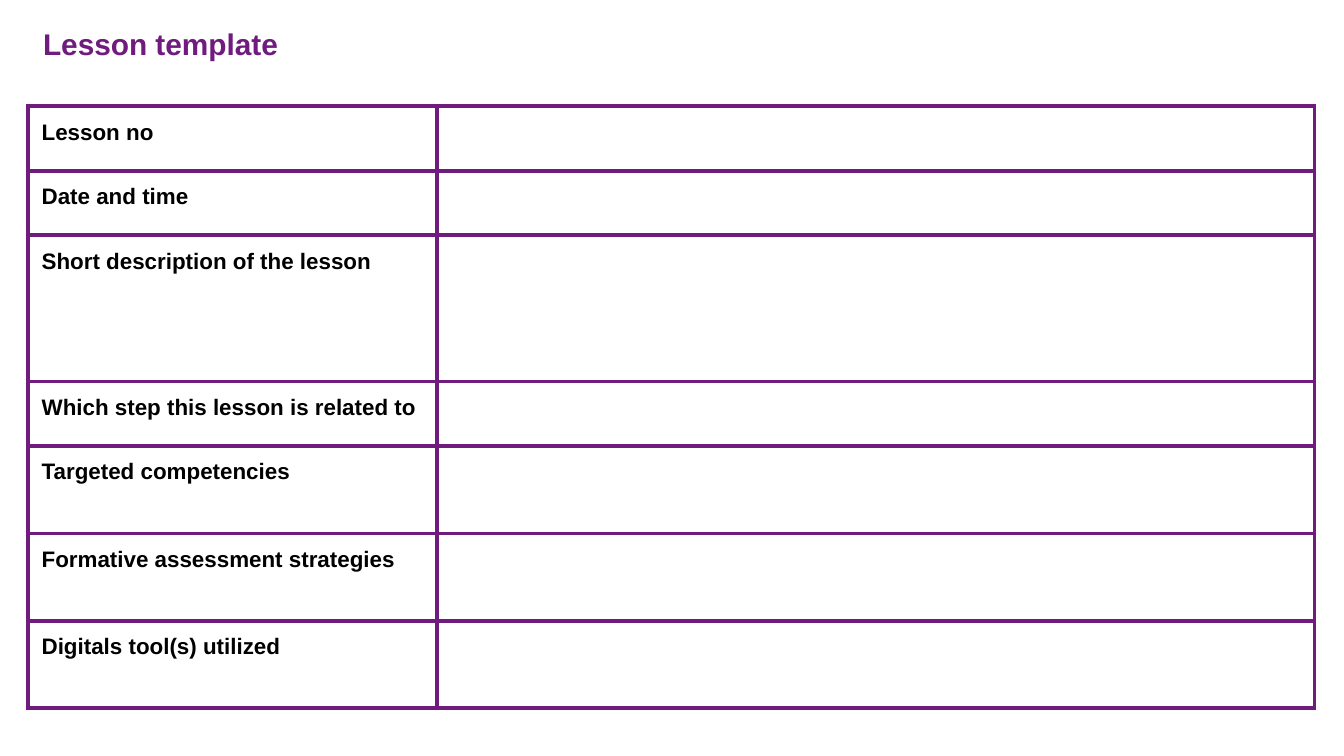
from lxml import etree
from pptx import Presentation
from pptx import util as u
from pptx.dml.color import RGBColor
from pptx.enum import text
from pptx.oxml import ns

PURPLE = RGBColor(0x70, 0x1C, 0x7F)
BLACK = RGBColor(0, 0, 0)
FONT = "Arial"
INSET = u.Inches(0.1)
BORDER_WIDTH = u.Pt(2.25)

# Widescreen slide
SLIDE_WIDTH = u.Inches(10)
SLIDE_HEIGHT = SLIDE_WIDTH * 9 // 16

# Table grid, in inches
COLUMN_WIDTHS = (3.04, 6.53)
SHORT, MEDIUM, TALL = 0.48, 0.65, 1.09
LESSON_FIELDS = (
    ("Lesson no", SHORT),
    ("Date and time", SHORT),
    ("Short description of the lesson", TALL),
    ("Which step this lesson is related to", SHORT),
    ("Targeted competencies", MEDIUM),
    ("Formative assessment strategies", MEDIUM),
    ("Digitals tool(s) utilized", MEDIUM),
)


def write_bold(frame, wording, size, color):
    paragraph = frame.paragraphs[0]
    paragraph.alignment = text.PP_ALIGN.LEFT
    run = paragraph.add_run()
    run.text = wording
    run.font.name = FONT
    run.font.size = u.Pt(size)
    run.font.bold = True
    run.font.color.rgb = color


def set_insets(area):
    area.margin_left = area.margin_right = INSET
    area.margin_top = area.margin_bottom = INSET


def add_title(slide, wording):
    title = slide.shapes.title
    title.left, title.top = u.Inches(0.22), u.Inches(0.09)
    title.width, title.height = u.Inches(9.2), u.Inches(1.17)
    frame = title.text_frame
    frame.auto_size = text.MSO_AUTO_SIZE.NONE
    frame.vertical_anchor = text.MSO_ANCHOR.TOP
    set_insets(frame)
    write_bold(frame, wording, 16, PURPLE)


def outline_cell(cell):
    properties = cell._tc.get_or_add_tcPr()
    for side in ("a:lnL", "a:lnR", "a:lnT", "a:lnB"):
        line = etree.SubElement(properties, ns.qn(side), w=str(BORDER_WIDTH))
        fill = etree.SubElement(line, ns.qn("a:solidFill"))
        etree.SubElement(fill, ns.qn("a:srgbClr"), val=str(PURPLE))


def add_lesson_table(slide):
    height = sum(row_height for _, row_height in LESSON_FIELDS)
    table = slide.shapes.add_table(
        len(LESSON_FIELDS), len(COLUMN_WIDTHS),
        u.Inches(0.21), u.Inches(0.79),
        u.Inches(sum(COLUMN_WIDTHS)), u.Inches(height),
    ).table
    table.first_row = table.horz_banding = False

    for column, width in zip(table.columns, COLUMN_WIDTHS):
        column.width = u.Inches(width)
    for row, (label, row_height) in zip(table.rows, LESSON_FIELDS):
        row.height = u.Inches(row_height)
        for cell in row.cells:
            outline_cell(cell)
            cell.fill.background()
        # Labels on the left, answers left open on the right
        label_cell = row.cells[0]
        set_insets(label_cell)
        write_bold(label_cell.text_frame, label, 12, BLACK)


def main():
    deck = Presentation()
    deck.slide_width, deck.slide_height = SLIDE_WIDTH, SLIDE_HEIGHT
    slide = deck.slides.add_slide(deck.slide_layouts.get_by_name("Title Only"))
    add_title(slide, "Lesson template")
    add_lesson_table(slide)
    deck.save("out.pptx")


if __name__ == "__main__":
    main()
